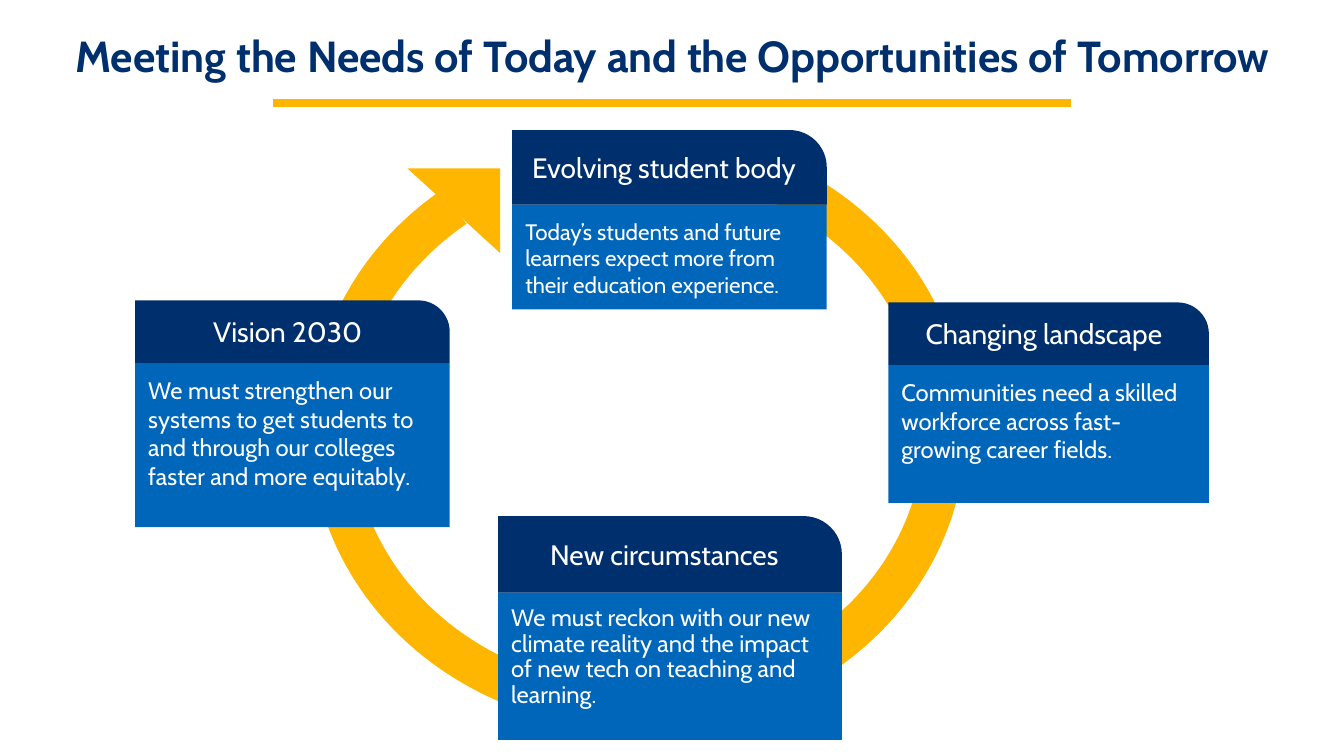
from pptx import Presentation
from pptx import util as u
from pptx.dml.color import RGBColor
from pptx.enum import shapes, text
from pptx.oxml.ns import qn
from lxml import etree

PX = 9144  # EMU; 100 px to the inch
FONT = "Cabin"
NAVY, BLUE, GOLD, WHITE = "002F6D", "0066BA", "FFB600", "FFFFFF"
HEADER_SIZE, BODY_SIZE = 20, 17

# left, top, width, header height, body height, header, body, body format
CARDS = [
    (134, 298, 312, 62, 163, "Vision 2030",
     "We must strengthen our systems to get students to and through our "
     "colleges faster and more equitably.", {}),
    (881, 300, 318, 62, 137, "Changing landscape",
     "Communities need a skilled workforce across fast-growing career fields.", {}),
    (508, 129, 312, 74, 104, "Evolving student body",
     "Today’s students and future learners expect more from their education "
     "experience.", {"size": 16}),
    (494, 512, 341, 76, 146, "New circumstances",
     "We must reckon with our new climate reality and the impact of new tech "
     "on teaching and learning.", {"spacing": 0.9}),
]


def px(n):
    return u.Emu(n * PX)


def rgb(color):
    return RGBColor.from_string(color)


def write(s, words, size=BODY_SIZE, color=WHITE, bold=False, inset=13,
          align=text.PP_ALIGN.LEFT, anchor=text.MSO_ANCHOR.TOP, spacing=None):
    tf = s.text_frame
    tf.word_wrap = True
    tf.vertical_anchor = anchor
    tf.margin_left = tf.margin_right = px(inset)
    tf.margin_top = tf.margin_bottom = px(inset)
    p = tf.paragraphs[0]
    p.alignment = align
    if spacing:
        p.line_spacing = spacing
    r = p.add_run()
    r.text = words
    r.font.name = FONT
    r.font.size = u.Pt(size)
    r.font.bold = bold
    r.font.color.rgb = rgb(color)


def add_block(parent, kind, box, fill, adjustments=(), rotation=0):
    """Add a plain filled preset shape to a slide or a group."""
    s = parent.shapes.add_shape(kind, *map(px, box))
    s.shadow.inherit = False
    s.fill.solid()
    s.fill.fore_color.rgb = rgb(fill)
    s.line.fill.background()
    s.rotation = rotation
    for i, value in enumerate(adjustments):
        s.adjustments[i] = value
    return s


def add_cycle_arrow(slide):
    group = slide.shapes.add_group_shape()
    add_block(group, shapes.MSO_SHAPE.BLOCK_ARC, (308, 129, 650, 595), GOLD,
              (54, 30.13, 0.07), 180)
    add_block(group, shapes.MSO_SHAPE.RIGHT_TRIANGLE, (404, 167, 92, 84), GOLD,
              rotation=180)


def add_title(slide, words):
    s = slide.shapes.add_textbox(*map(px, (0, 25, 1333, 77)))
    write(s, words, size=31, color=NAVY, bold=True, inset=10,
          align=text.PP_ALIGN.CENTER, spacing=0.9)


def add_rule(slide, x1, x2, y, color, weight):
    s = slide.shapes.add_connector(shapes.MSO_CONNECTOR.STRAIGHT,
                                   px(x1), px(y), px(x2), px(y))
    s.line.color.rgb = rgb(color)
    s.line.width = u.Pt(weight)
    etree.SubElement(s._element.spPr, qn("a:effectLst"))


def add_card(slide, left, top, width, header_h, body_h, header, body, body_format):
    group = slide.shapes.add_group_shape()
    s = add_block(group, shapes.MSO_SHAPE.RECTANGLE,
                  (left, top + header_h, width, body_h), BLUE)
    write(s, body, **body_format)
    s = add_block(group, shapes.MSO_SHAPE.ROUND_1_RECTANGLE,
                  (left, top, width, header_h), NAVY, (0.5,))
    write(s, header, size=HEADER_SIZE, align=text.PP_ALIGN.CENTER,
          anchor=text.MSO_ANCHOR.MIDDLE)


def main():
    prs = Presentation()
    prs.slide_width, prs.slide_height = px(1333), px(750)
    slide = prs.slides.add_slide(prs.slide_layouts[6])
    add_cycle_arrow(slide)
    add_title(slide, "Meeting the Needs of Today and the Opportunities of Tomorrow")
    add_rule(slide, 271, 1062, 102, GOLD, 5.75)
    for card in CARDS:
        add_card(slide, *card)
    prs.save("out.pptx")


if __name__ == "__main__":
    main()
